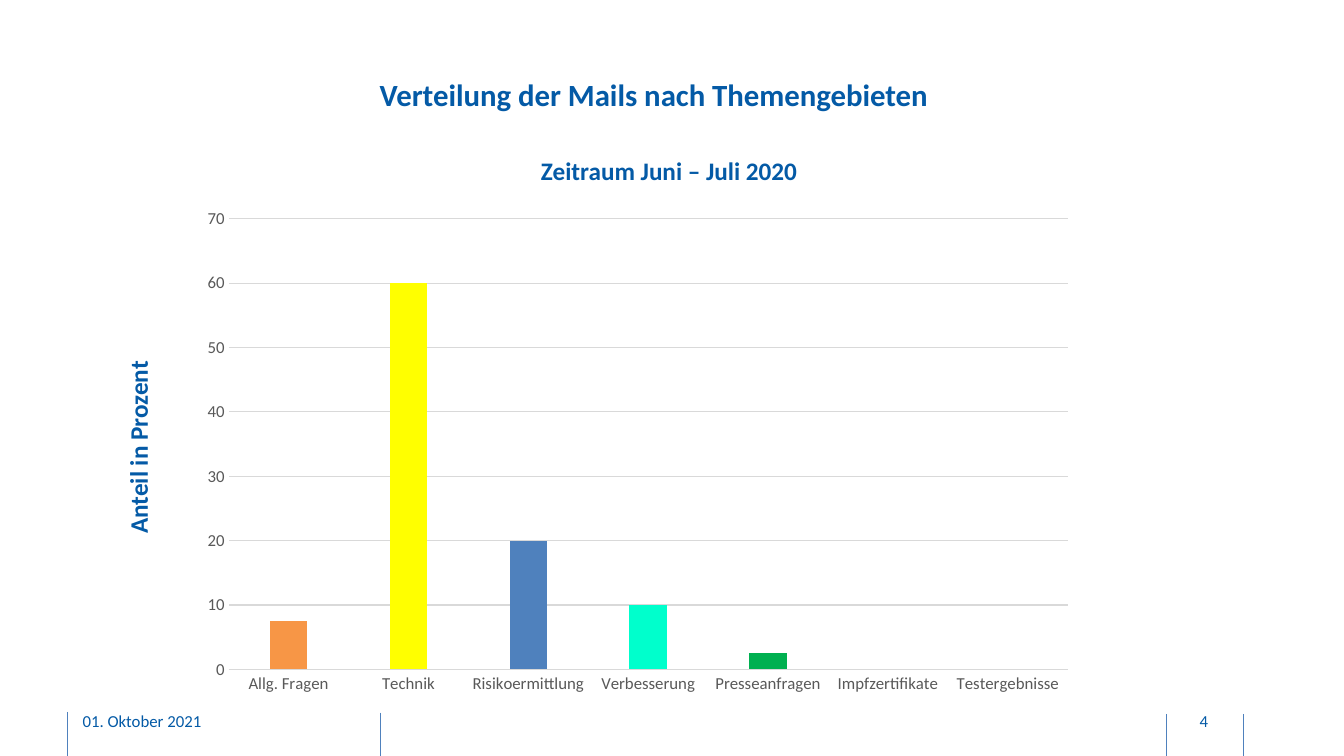
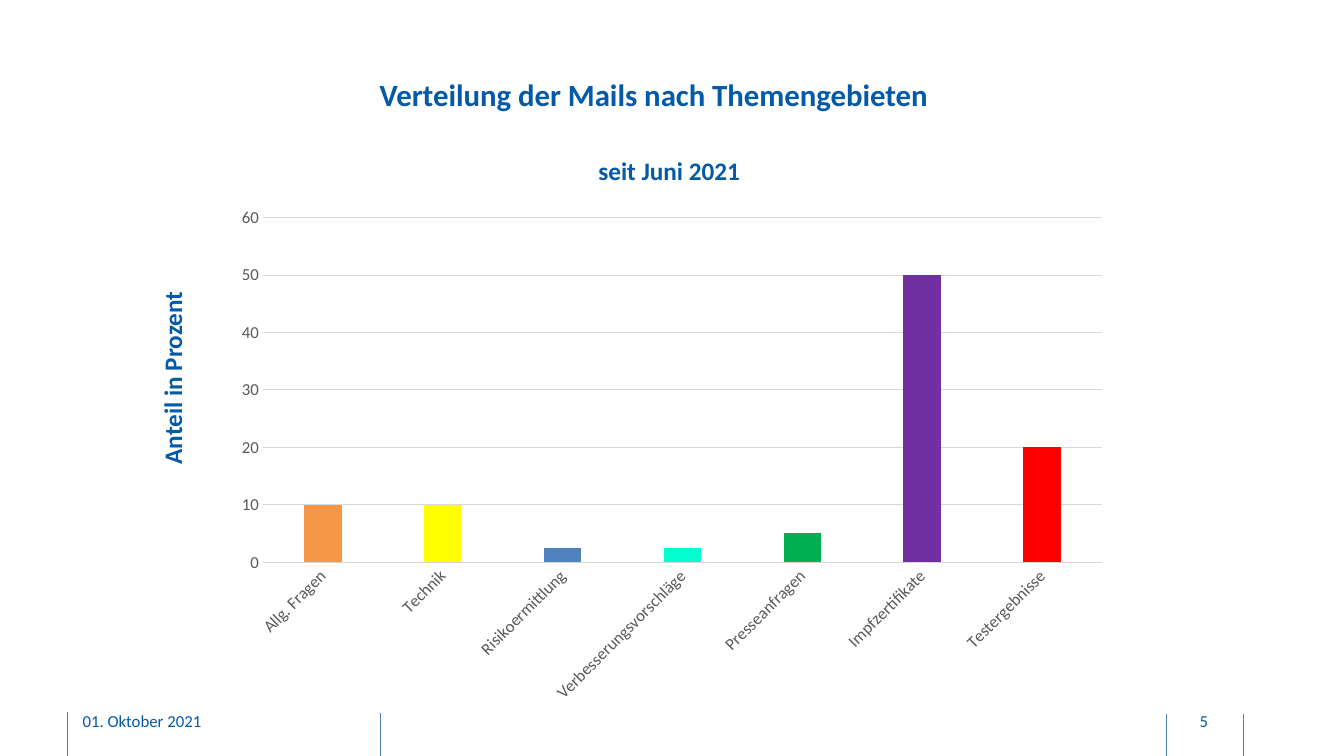
from lxml import etree
from pptx import Presentation
from pptx import util as u
from pptx.chart import data as cd
from pptx.dml.color import RGBColor
from pptx.enum import chart as ch, shapes as sh, text as tx
from pptx.oxml.ns import qn

HUE = {
    "blue": "045AA6", "rule": "4F81BD", "grey": "595959", "grid": "D9D9D9",
    "text": "000000", "orange": "F79646", "yellow": "FFFF00", "steel": "4F81BD",
    "mint": "00FFCC", "green": "00B050", "plum": "7030A0", "red": "FF0000",
}
BARS = ["orange", "yellow", "steel", "mint", "green", "plum", "red"]
FONT = "Calibri"


def rgb(name):
    return RGBColor.from_string(HUE[name])


def style(font, size, hue, bold=False):
    font.name, font.size, font.bold = FONT, u.Pt(size), bold
    font.color.rgb = rgb(hue)


def stroke(line, hue, width):
    line.color.rgb = rgb(hue)
    line.width = u.Pt(width)


def write(shape, words, size=12, hue="blue", bold=False, mid=True, pad=0):
    """Fill a shape with one styled paragraph; pad is the top and bottom inset."""
    frame = shape.text_frame
    frame.word_wrap = True
    frame.auto_size = tx.MSO_AUTO_SIZE.NONE
    frame.vertical_anchor = tx.MSO_ANCHOR.MIDDLE
    frame.margin_left = frame.margin_right = 0
    frame.margin_top = frame.margin_bottom = u.Pt(pad)
    para = frame.paragraphs[0]
    para.alignment = tx.PP_ALIGN.CENTER if mid else tx.PP_ALIGN.LEFT
    run = para.add_run()
    run.text = words
    style(run.font, size, hue, bold)


class Deck:
    def __init__(self):
        self.prs = Presentation()
        self.prs.slide_width, self.prs.slide_height = u.Pt(960), u.Pt(540)
        self.slide = None

    def page(self, title, num):
        """Start a slide with its title, footer rules, date and number."""
        self.slide = self.prs.slides.add_slide(self.prs.slide_layouts[5])
        head = self.slide.shapes.title
        head.left, head.top = u.Pt(48), u.Pt(30)
        head.width, head.height = u.Pt(838), u.Pt(75)
        write(head, title, size=22, bold=True)
        for x, top in [(48, 508.5), (272, 509), (833, 510), (888, 510)]:
            self.rule(x, top)
        self.label("01. Oktober 2021", 59, 500.5, 195, 29, mid=False, pad=3.6)
        self.label(str(num), 834, 500.5, 52, 29, pad=3.6)

    def rule(self, x, top):
        """Draw a footer line from top to the slide's lower edge."""
        line = self.slide.shapes.add_connector(
            sh.MSO_CONNECTOR.STRAIGHT, u.Pt(x), u.Pt(top), u.Pt(x), u.Pt(540))
        stroke(line.line, "rule", 0.5)
        etree.SubElement(line._element.spPr, qn("a:effectLst"))

    def label(self, words, x, y, w, h, turn=0, **fmt):
        box = self.slide.shapes.add_textbox(u.Pt(x), u.Pt(y), u.Pt(w), u.Pt(h))
        box.rotation = turn
        write(box, words, **fmt)

    def axis(self, axis, tilt=0):
        """Style one axis; tilt turns its labels, in degrees."""
        axis.major_tick_mark = axis.minor_tick_mark = ch.XL_TICK_MARK.NONE
        style(axis.tick_labels.font, 12, "grey")
        body = axis._element.find(qn("c:txPr")).find(qn("a:bodyPr"))
        body.set("rot", str(tilt * 60000))
        body.set("vert", "horz")

    def chart(self, cats, vals, x, y, w, h, top, tilt):
        data = cd.CategoryChartData()
        data.categories = cats
        data.add_series("Series 1", vals)
        chart = self.slide.shapes.add_chart(
            ch.XL_CHART_TYPE.COLUMN_CLUSTERED,
            u.Pt(x), u.Pt(y), u.Pt(w), u.Pt(h), data).chart
        chart.has_legend = chart.has_title = False
        style(chart.font, 10, "text")

        cat, val = chart.category_axis, chart.value_axis
        self.axis(cat, tilt)
        self.axis(val)
        stroke(cat.format.line, "grid", 0.75)
        val.format.line.fill.background()
        val.has_major_gridlines = True
        stroke(val.major_gridlines.format.line, "grid", 0.75)
        val.minimum_scale, val.maximum_scale, val.major_unit = 0, top, 10

        plot = chart.plots[0]
        plot.gap_width, plot.vary_by_categories = 219, False
        bars = plot.series[0]
        bars.format.fill.solid()
        bars.format.fill.fore_color.rgb = rgb("steel")
        for i, (hue, num) in enumerate(zip(BARS, vals)):
            if num is not None:
                fill = bars.points[i].format.fill
                fill.solid()
                fill.fore_color.rgb = rgb(hue)

    def share(self, num, span, better, vals, x, y, h, mid, top, tilt=0):
        """Build a slide of mail shares; mid is the height of the axis title."""
        self.page("Verteilung der Mails nach Themengebieten", num)
        cats = ["Allg. Fragen", "Technik", "Risikoermittlung", better,
                "Presseanfragen", "Impfzertifikate", "Testergebnisse"]
        self.chart(cats, vals, x, y, 640, h, top, tilt)
        wide, high = 144, 75
        self.label("Anteil in Prozent", x - 37 - wide / 2, mid - high / 2,
                   wide, high, turn=270, size=18, bold=True)
        self.label(span, 59, 84, 838, 75, size=18, bold=True)


def main():
    deck = Deck()
    deck.share(4, "Zeitraum Juni – Juli 2020", "Verbesserung",
               [7.5, 60, 20, 10, 2.5, None, None],
               x=135.5, y=142, h=360.5, mid=319.5, top=70)
    deck.share(5, "seit Juni 2021", "Verbesserungsvorschläge",
               [10, 10, 2.5, 2.5, 5, 50, 20],
               x=160, y=141, h=368.5, mid=270, top=60, tilt=-45)
    deck.prs.save("out.pptx")


if __name__ == "__main__":
    main()
